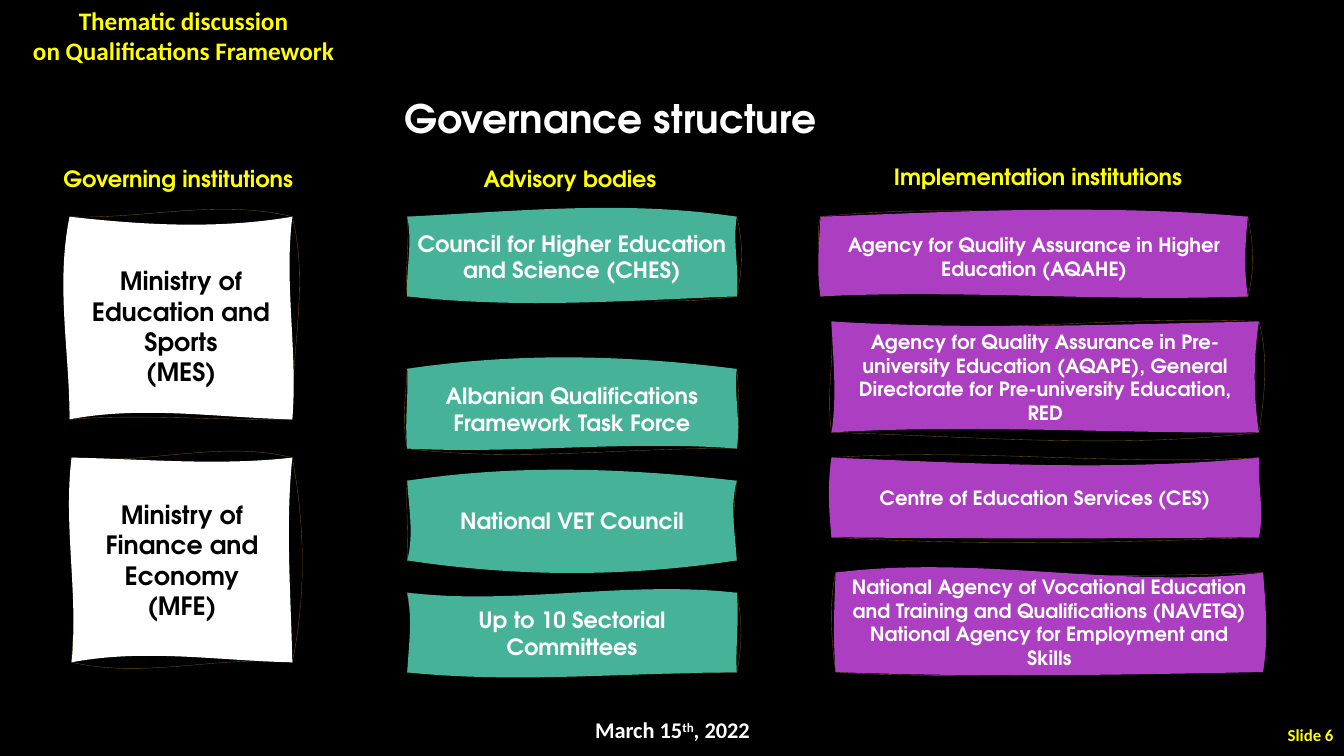
"""Build the governance structure slide with its three columns of hand-drawn cards."""
from dataclasses import dataclass

import pptx
import pptx.dml.color
import pptx.enum.text
import pptx.oxml.ns
import pptx.shapes.autoshape
import pptx.slide
import pptx.text.text
import pptx.util
from lxml import etree

Pt = pptx.util.Pt
Align = pptx.enum.text.PP_ALIGN
Anchor = pptx.enum.text.MSO_ANCHOR
AutoSize = pptx.enum.text.MSO_AUTO_SIZE
qn = pptx.oxml.ns.qn

COLORS = {"black": "000000", "white": "FFFFFF", "yellow": "FFFF00",
          "green": "46B298", "purple": "AC3EC1", "brown": "745013"}
DISPLAY = "TeX Gyre Adventor"
BODY = "Calibri"


@dataclass(frozen=True)
class Column:
    """Shared look of the cards in one column."""
    fill: str
    ink: str
    size: float


@dataclass(frozen=True)
class Card:
    """A card; bows bend its top, right, bottom and left sides, two points each."""
    column: Column
    text: str
    box: tuple[float, float, float, float]
    outline: tuple[float, ...]
    body: tuple[float, ...]
    top_inset: float = 3.6


@dataclass(frozen=True)
class Label:
    """A line of free text on the slide."""
    text: str
    box: tuple[float, float, float, float]
    size: float
    color: str = "yellow"
    font: str = DISPLAY
    align: Align = Align.CENTER
    wrap: bool = True
    inset: tuple[float, float] = (7.2, 3.6)
    anchor: Anchor = Anchor.TOP
    grow: bool = True


GOVERNING = Column("white", "black", 18)
ADVISORY = Column("green", "white", 16)
IMPLEMENTING = Column("purple", "white", 14)

CARDS = [
    Card(IMPLEMENTING,
         "National Agency of Vocational Education and Training and Qualifications (NAVETQ)\n"
         "National Agency for Employment and Skills", (596.9, 409, 305.3, 71),
         (1, 4, 1, 0, -4, 7, -3, -5), (-13, 12, 2, 4, 2, 4, -2, -1)),
    Card(IMPLEMENTING, "Centre of Education Services (CES)", (594, 326.9, 305.3, 56.9),
         (-7, 6, -2, -2, 4, 6, 1, -3), (4, 10, -1, 4, 1, 1, -2, -3)),
    Card(IMPLEMENTING,
         "Agency for Quality Assurance in Pre-university Education (AQAPE), "
         "General Directorate for Pre-university Education, RED", (594, 229.7, 305.3, 79.2),
         (11, -5, 7, 4, 12, 3, -4, 2), (6, 2, -4, -4, 1, -6, 4, 1)),
    Card(IMPLEMENTING, "Agency for Quality Assurance in Higher Education (AQAHE)",
         (586.1, 154.8, 305.3, 56.9),
         (-11, 3, 4, 5, 0, -9, 4, -5), (-4, -9, -2, -3, 4, -5, -3, -1)),
    Card(ADVISORY, "Up to 10 Sectorial Committees", (290.9, 423.4, 235.4, 56.9),
         (8, 9, 4, 4, 1, 3, 5, 3), (9, -9, 2, -1, 0, 8, 1, 4)),
    Card(ADVISORY, "National VET Council", (290.9, 343.4, 235.4, 56.9),
         (-7, 10, -2, -4, -8, -7, 1, -1), (-12, -9, -5, -1, 12, 12, 5, 1)),
    Card(ADVISORY, "Council for Higher Education and Science (CHES)",
         (290.9, 154.8, 235.4, 56.9),
         (-4, 4, 5, 4, 11, -9, -2, 2), (-4, -12, -3, 2, 3, 9, -1, 4)),
    Card(ADVISORY, "Albanian Qualifications Framework Task Force",
         (290.9, 263.5, 235.4, 56.9),
         (-12, 11, 2, 2, -1, 10, -4, -1), (-12, -10, -2, 3, -6, 4, -2, 1)),
    Card(GOVERNING, "Ministry of Education and Sports\n(MES)", (49.7, 154.8, 159.1, 144.7),
         (2, -13, 12, -1, 1, -4, 3, 9), (6, 9, -6, 4, -1, -10, 0, -10), top_inset=15),
    Card(GOVERNING, "Ministry of Finance and Economy\n(MFE)", (51.1, 326.9, 157.7, 146.2),
         (6, -13, 9, 10, -5, 12, 2, 11), (1, 6, -5, -1, -1, -10, 5, -6)),
]

LABELS = [
    Label("March 15^th^, 2022", (290.2, 508.3, 380.2, 26.6), 16, "white", BODY),
    Label("Slide 6", (889.9, 509.8, 69.8, 30.2), 12, font=BODY, align=Align.RIGHT,
          anchor=Anchor.MIDDLE, grow=False),
    Label("Governance structure", (240.5, 67.7, 391, 33.8), 28, "white", inset=(0, 0)),
    Label("Governing institutions", (38.2, 114.5, 181.4, 26.6), 16,
          align=Align.LEFT, wrap=False),
    Label("Advisory bodies", (338.4, 114.5, 139.7, 26.6), 16, align=Align.LEFT, wrap=False),
    Label("Implementation institutions", (631.4, 113, 223.2, 26.6), 16,
          align=Align.LEFT, wrap=False),
    Label("Thematic discussion\non Qualifications Framework", (5.8, 0, 250.6, 51.1), 18,
          font=BODY),
]


def rgb(name: str) -> pptx.dml.color.RGBColor:
    """Look up a named colour."""
    return pptx.dml.color.RGBColor.from_string(COLORS[name])


def write(tf: pptx.text.text.TextFrame, text: str, *, size: float, color: str,
          font: str = DISPLAY, align: Align = Align.CENTER) -> None:
    """Fill a frame with bold lines; text between carets is superscript."""
    for i, line in enumerate(text.split("\n")):
        p = tf.add_paragraph() if i else tf.paragraphs[0]
        p.alignment = align
        for j, piece in enumerate(line.split("^")):
            r = p.add_run()
            r.text = piece
            r.font.size, r.font.name, r.font.bold = Pt(size), font, True
            r.font.color.rgb = rgb(color)
            if j % 2:
                r.font._element.set("baseline", "30000")


def add_curves(paths: etree._Element, width: int, height: int,
               bows: tuple[float, ...], hide: str, value: str) -> None:
    """Append a closed outline whose four sides bend by the given bows."""
    path = etree.SubElement(paths, qn("a:path"), {"w": str(width), "h": str(height), hide: value})
    corners = [(0, 0), (width, 0), (width, height), (0, height), (0, 0)]
    start = etree.SubElement(path, qn("a:moveTo"))
    etree.SubElement(start, qn("a:pt"), x="0", y="0")
    for side, ((x0, y0), (x1, y1)) in enumerate(zip(corners, corners[1:])):
        curve = etree.SubElement(path, qn("a:cubicBezTo"))
        for t, bow in zip((1 / 3, 2 / 3, 1), (*bows[2 * side:2 * side + 2], 0)):
            dx, dy = (Pt(bow), 0) if side % 2 else (0, Pt(bow))
            x, y = round(x0 + (x1 - x0) * t + dx), round(y0 + (y1 - y0) * t + dy)
            etree.SubElement(curve, qn("a:pt"), x=str(x), y=str(y))
    etree.SubElement(path, qn("a:close"))


def add_card(s: pptx.slide.Slide, card: Card) -> None:
    """Draw one card with its bent fill, loose outline and text."""
    x, y, w, h = (Pt(v) for v in card.box)
    builder = s.shapes.build_freeform(x, y)
    builder.add_line_segments([(x + w, y), (x + w, y + h), (x, y + h)])
    sp = builder.convert_to_shape()
    paths = sp._element.find(".//" + qn("a:pathLst"))
    paths.remove(paths[0])
    add_curves(paths, w, h, card.outline, "fill", "none")
    add_curves(paths, w, h, card.body, "stroke", "0")
    sp.shadow.inherit = False
    sp.fill.solid()
    sp.fill.fore_color.rgb = rgb(card.column.fill)
    sp.line.color.rgb = rgb("brown")
    sp.line.width = Pt(0.25)
    tf = sp.text_frame
    tf.word_wrap = True
    tf.vertical_anchor = Anchor.MIDDLE
    tf.margin_top = Pt(card.top_inset)
    write(tf, card.text, size=card.column.size, color=card.column.ink)


def add_label(s: pptx.slide.Slide, label: Label) -> None:
    """Place one text box."""
    tf = s.shapes.add_textbox(*(Pt(v) for v in label.box)).text_frame
    tf.word_wrap = label.wrap
    tf.auto_size = AutoSize.SHAPE_TO_FIT_TEXT if label.grow else AutoSize.NONE
    tf.vertical_anchor = label.anchor
    tf.margin_left = tf.margin_right = Pt(label.inset[0])
    tf.margin_top = tf.margin_bottom = Pt(label.inset[1])
    write(tf, label.text, size=label.size, color=label.color, font=label.font, align=label.align)


def main() -> None:
    """Build and save the slide."""
    prs = pptx.Presentation()
    prs.slide_width, prs.slide_height = Pt(960), Pt(540)
    s = prs.slides.add_slide(prs.slide_layouts[6])
    s.background.fill.solid()
    s.background.fill.fore_color.rgb = rgb("black")
    for card in CARDS:
        add_card(s, card)
    for label in LABELS:
        add_label(s, label)
    prs.save("out.pptx")


if __name__ == "__main__":
    main()
